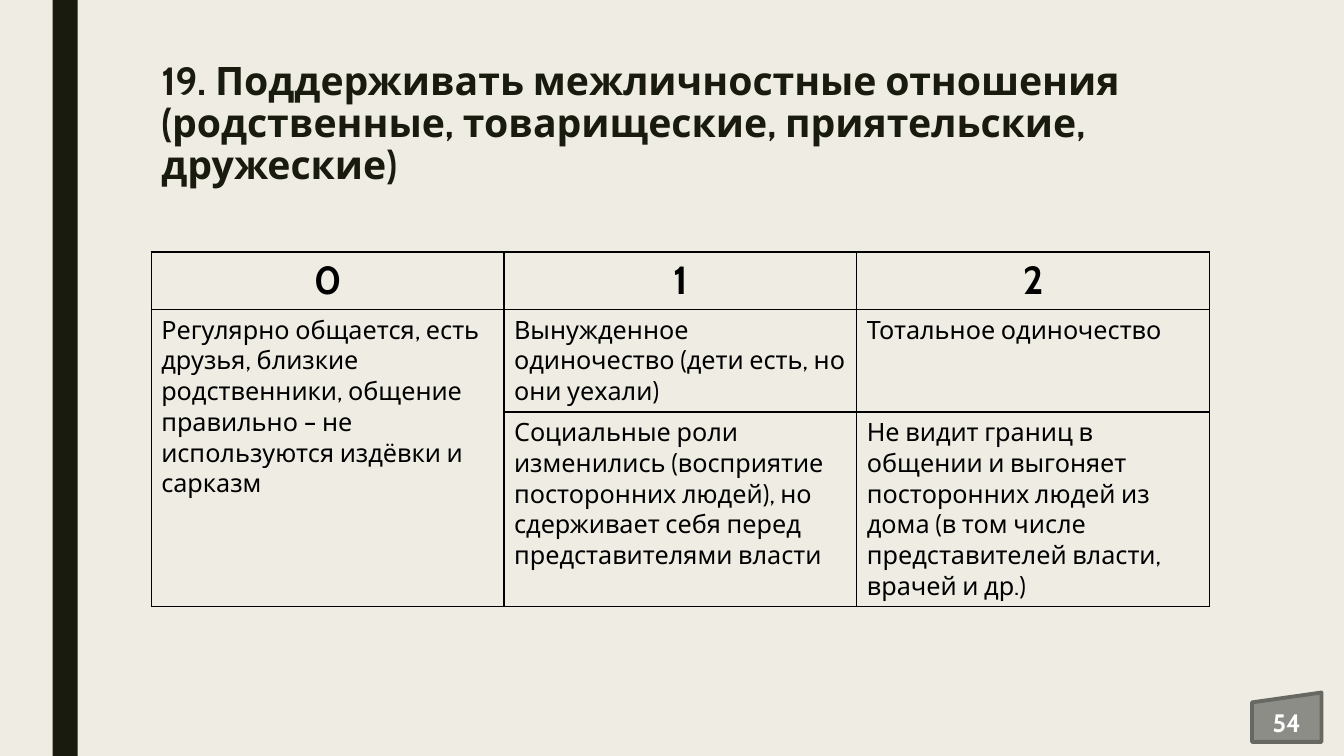
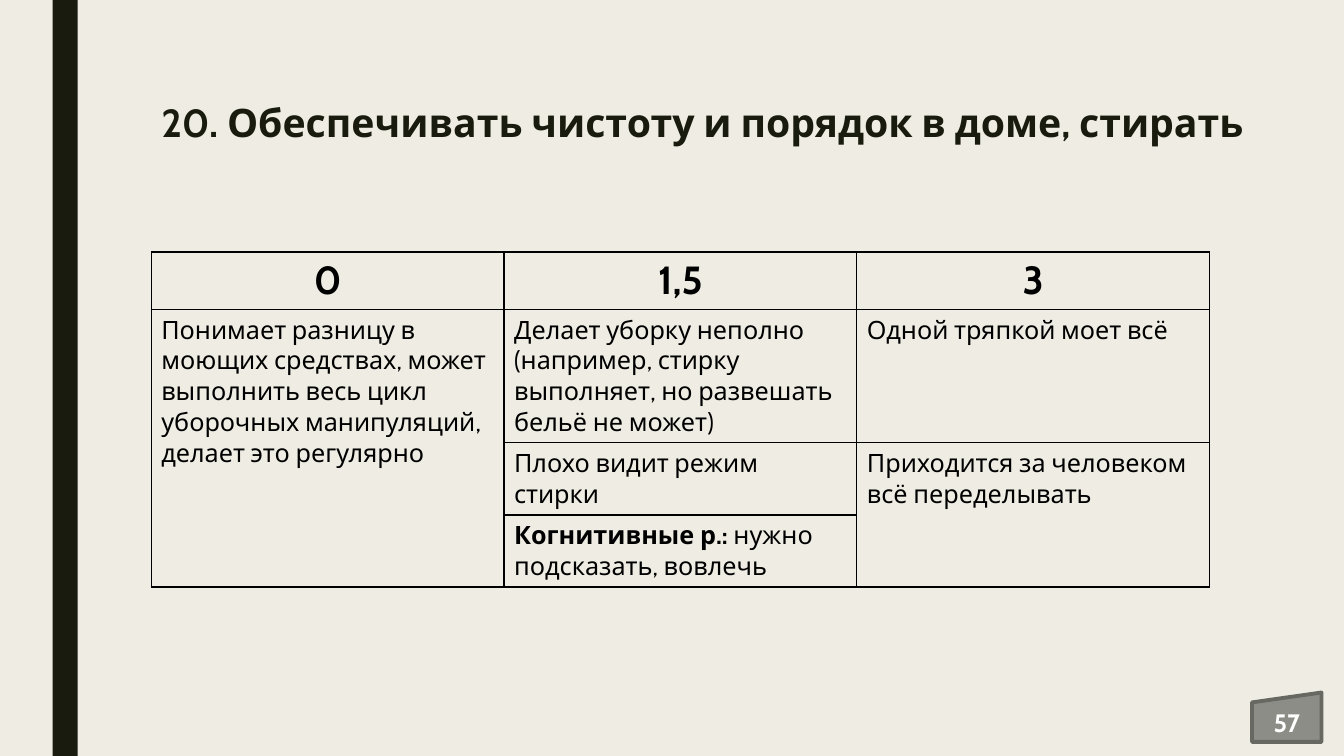
from dataclasses import dataclass

from lxml.etree import SubElement
from pptx import Presentation
from pptx.dml.color import RGBColor
from pptx.enum.shapes import MSO_SHAPE
from pptx.enum.text import MSO_ANCHOR, MSO_AUTO_SIZE, PP_ALIGN
from pptx.oxml.ns import qn
from pptx.util import Pt


@dataclass(frozen=True)
class Theme:
    """Colours, font and type sizes of the deck."""
    paper: str = "EFEDE3"
    dark: str = "191B0E"
    tab: str = "8C8D86"
    tab_line: str = "686863"
    white: str = "FFFFFF"
    black: str = "000000"
    font: str = "Cabin"
    large: int = 28
    text: int = 18


def write(tf, text, *, size, color, font, bold=False, lead="", align=PP_ALIGN.LEFT, spacing=None):
    """Write one paragraph, with an optional bold lead before the text."""
    p = tf.paragraphs[0]
    p.alignment = align
    if spacing:
        p.line_spacing = spacing
    for part, strong in ((lead, True), (text, bold)):
        if part:
            r = p.add_run()
            r.text = part
            r.font.name = font
            r.font.size = Pt(size)
            r.font.bold = strong
            r.font.color.rgb = RGBColor.from_string(color)


class Deck:
    """Holds the presentation, its theme and the current slide."""

    def __init__(self, theme):
        """Set the slide size, the background and the title position."""
        self.theme = theme
        self.prs = Presentation()
        self.prs.slide_width, self.prs.slide_height = Pt(960), Pt(540)
        self.master = self.prs.slide_master
        self.layout = self.prs.slide_layouts.get_by_name("Title Only")
        fill = self.master.background.fill
        fill.solid()
        fill.fore_color.rgb = RGBColor.from_string(theme.paper)
        title = self.layout.placeholders[0]
        title.left, title.top, title.width, title.height = Pt(108), Pt(54), Pt(815), Pt(70.5)
        self.s = None

    def slide(self, title, number):
        """Start a slide with its title and page number."""
        first = self.s is None
        self.s = self.prs.slides.add_slide(self.layout)
        if first:
            self.master_bar()
        self.title(title)
        self.page_number(number)

    def shape(self, kind, left, top, width, height, fill, line=None):
        """Add a filled shape with an optional outline."""
        sp = self.s.shapes.add_shape(kind, Pt(left), Pt(top), Pt(width), Pt(height))
        sp.shadow.inherit = False
        sp.fill.solid()
        sp.fill.fore_color.rgb = RGBColor.from_string(fill)
        if line:
            sp.line.color.rgb = RGBColor.from_string(line)
            sp.line.width = Pt(2.75)
        else:
            sp.line.fill.background()
        return sp

    def master_bar(self):
        """Put the dark vertical bar on the master, behind every slide."""
        sp = self.shape(MSO_SHAPE.RECTANGLE, 37.5, 0, 18, 540, self.theme.dark)
        sp.element.nvSpPr.cNvPr.set("id", "100")
        self.master.shapes.element.insert(2, sp.element)

    def title(self, text):
        """Fill the title placeholder."""
        tf = self.s.shapes.title.text_frame
        tf.auto_size = MSO_AUTO_SIZE.NONE
        tf.vertical_anchor = MSO_ANCHOR.MIDDLE
        write(tf, text, size=self.theme.large, color=self.theme.dark,
              font=self.theme.font, bold=True, spacing=0.89)

    def page_number(self, number):
        """Draw the tab with the page number."""
        sp = self.shape(MSO_SHAPE.FLOWCHART_MANUAL_INPUT, 894.25, 494.65, 49.7, 35.3,
                        self.theme.tab, self.theme.tab_line)
        sp.text_frame.vertical_anchor = MSO_ANCHOR.MIDDLE
        write(sp.text_frame, str(number), size=self.theme.text, color=self.theme.white,
              font=self.theme.font, bold=True, align=PP_ALIGN.CENTER)

    def borders(self, cell):
        """Outline a cell with thin black lines."""
        tc_pr = cell._tc.get_or_add_tcPr()
        for side in ("a:lnL", "a:lnR", "a:lnT", "a:lnB"):
            ln = SubElement(tc_pr, qn(side), w=str(Pt(1)))
            SubElement(SubElement(ln, qn("a:solidFill")), qn("a:srgbClr"), val=self.theme.black)

    def table(self, rows, heights):
        """Add a score table; None joins a cell to the one above."""
        th = self.theme
        frame = self.s.shapes.add_table(len(rows), len(rows[0]), Pt(108), Pt(180),
                                        Pt(756), Pt(sum(heights)))
        table = frame.table
        table.first_row = table.horz_banding = False
        for row, height in zip(table.rows, heights):
            row.height = Pt(height)
        for i, row in enumerate(rows):
            for j, value in enumerate(row):
                cell = table.cell(i, j)
                self.borders(cell)
                cell.fill.background()
                if value is None:
                    continue
                lead, text = value if isinstance(value, tuple) else ("", value)
                head = i == 0
                write(cell.text_frame, text, lead=lead, color=th.black, font=th.font, bold=head,
                      size=th.large if head else th.text,
                      align=PP_ALIGN.CENTER if head else PP_ALIGN.LEFT)
        for j, column in enumerate(zip(*rows)):
            starts = [i for i, value in enumerate(column) if value is not None]
            for start, end in zip(starts, starts[1:] + [len(rows)]):
                if end - start > 1:
                    table.cell(start, j).merge(table.cell(end - 1, j))


def main():
    """Build and save the deck."""
    deck = Deck(Theme())

    deck.slide("19. Поддерживать межличностные отношения "
               "(родственные, товарищеские, приятельские, дружеские)", 54)
    deck.table([
        ("0", "1", "2"),
        ("Регулярно общается, есть друзья, близкие родственники, общение правильно – "
         "не используются издёвки и сарказм",
         "Вынужденное одиночество (дети есть, но они уехали)",
         "Тотальное одиночество"),
        (None,
         "Социальные роли изменились (восприятие посторонних людей), "
         "но сдерживает себя перед представителями власти",
         "Не видит границ в общении и выгоняет посторонних людей из дома "
         "(в том числе представителей власти, врачей и др.)"),
    ], (41, 73, 139))

    deck.slide("20. Обеспечивать чистоту и порядок в доме, стирать", 57)
    deck.table([
        ("0", "1,5", "3"),
        ("Понимает разницу в моющих средствах, может выполнить весь цикл "
         "уборочных манипуляций, делает это регулярно",
         "Делает уборку неполно (например, стирку выполняет, но развешать бельё не может)",
         "Одной тряпкой моет всё"),
        (None, "Плохо видит режим стирки", "Приходится за человеком всё переделывать"),
        (None, ("Когнитивные р.: ", "нужно подсказать, вовлечь"), None),
    ], (41, 95, 51.5, 51.5))

    deck.prs.save("out.pptx")


if __name__ == "__main__":
    main()
